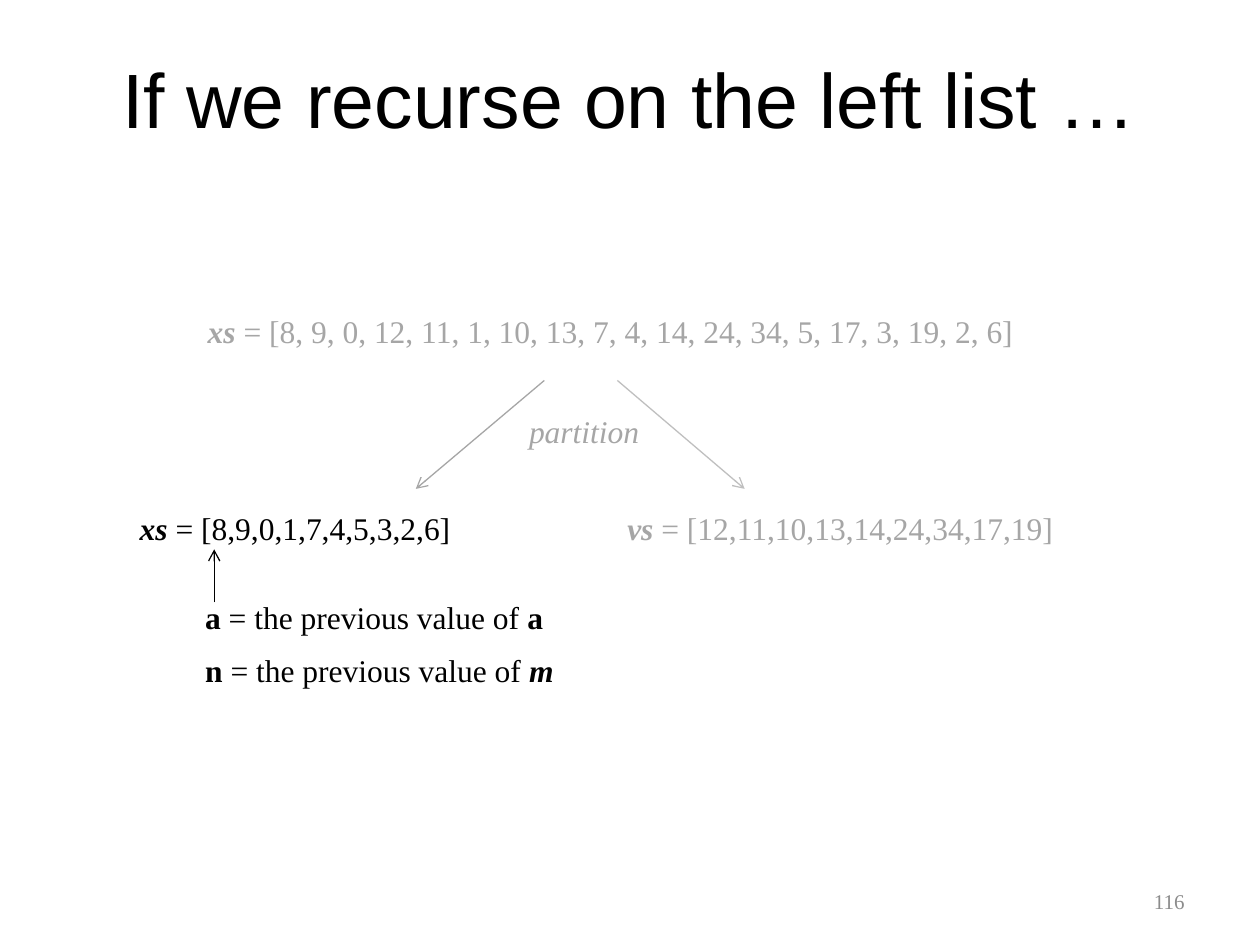
import dataclasses

import pptx
import pptx.dml.color
import pptx.enum.shapes
import pptx.enum.text
import pptx.oxml
import pptx.oxml.ns
import pptx.util

Inches = pptx.util.Inches
Pt = pptx.util.Pt
RGB = pptx.dml.color.RGBColor
Align = pptx.enum.text.PP_ALIGN
Anchor = pptx.enum.text.MSO_ANCHOR


@dataclasses.dataclass(frozen=True)
class Theme:
    ink: RGB = RGB(0x00, 0x00, 0x00)
    faded: RGB = RGB(0xA6, 0xA6, 0xA6)
    faint: RGB = RGB(0xBF, 0xBF, 0xBF)
    number: RGB = RGB(0x8C, 0x8C, 0x8C)
    title_font: str = "Arial"
    body_font: str = "Times New Roman"
    title_size: Pt = Pt(44)
    body_size: Pt = Pt(18)
    number_size: Pt = Pt(12)
    line_width: Pt = Pt(0.75)


THEME = Theme()
ROW_HEIGHT = 0.4


def style(paragraph, font, size, color, align):
    paragraph.font.name = font
    paragraph.font.size = size
    paragraph.font.color.rgb = color
    paragraph.alignment = align


def add_expression(slide, left, top, width, color, *parts):
    box = slide.shapes.add_textbox(
        Inches(left), Inches(top), Inches(width), Inches(ROW_HEIGHT))
    frame = box.text_frame
    frame.word_wrap = False
    frame.auto_size = pptx.enum.text.MSO_AUTO_SIZE.SHAPE_TO_FIT_TEXT
    paragraph = frame.paragraphs[0]
    style(paragraph, THEME.body_font, THEME.body_size, color, Align.LEFT)
    for text, emphasis in parts:
        run = paragraph.add_run()
        run.text = text
        if "b" in emphasis:
            run.font.bold = True
        if "i" in emphasis:
            run.font.italic = True


def add_arrow(slide, start, end, color):
    arrow = slide.shapes.add_connector(
        pptx.enum.shapes.MSO_CONNECTOR.STRAIGHT,
        *(Inches(value) for value in (*start, *end)))
    arrow.line.color.rgb = color
    arrow.line.width = THEME.line_width
    head = pptx.oxml.parse_xml(
        f'<a:tailEnd {pptx.oxml.ns.nsdecls("a")} type="arrow"/>')
    arrow.line._get_or_add_ln().append(head)
    arrow._element.spPr.append(pptx.oxml.parse_xml(
        f'<a:effectLst {pptx.oxml.ns.nsdecls("a")}/>'))


def place_title(slide, left, top, width, height):
    title = slide.shapes.title
    title.left, title.top = Inches(left), Inches(top)
    title.width, title.height = Inches(width), Inches(height)
    frame = title.text_frame
    frame.text = "If we recurse on the left list …"
    frame.vertical_anchor = Anchor.TOP
    frame.margin_top = Inches(0.11)
    style(frame.paragraphs[0], THEME.title_font, THEME.title_size,
          THEME.ink, Align.CENTER)


def place_partition(slide, left, top):
    add_expression(
        slide, left + 0.54, top, 6.66, THEME.faded, ("xs", "bi"),
        (" = [8, 9, 0, 12, 11, 1, 10, 13, 7, 4, 14, 24, 34, 5, 17, 3, 19, 2, 6]", ""))
    arrow_top, arrow_bottom = top + 0.59, top + 1.45
    add_arrow(slide, (left + 3.31, arrow_top), (left + 2.29, arrow_bottom), THEME.faded)
    add_arrow(slide, (left + 3.89, arrow_top), (left + 4.9, arrow_bottom), THEME.faint)
    add_expression(slide, left + 3.09, top + 0.79, 1.09, THEME.faded, ("partition", "i"))
    lists_top = top + 1.56
    add_expression(slide, left, lists_top, 2.69, THEME.ink,
                   ("xs", "bi"), (" = [8,9,0,1,7,4,5,3,2,6]", ""))
    add_expression(slide, left + 3.87, lists_top, 3.69, THEME.faded,
                   ("vs", "bi"), (" = [12,11,10,13,14,24,34,17,19]", ""))


def place_bounds(slide, left, top):
    add_arrow(slide, (left + 0.17, top + 0.08), (left + 0.17, top - 0.34), THEME.ink)
    bounds = (("a", "a", "b", 2.9), ("n", "m", "bi", 2.99))
    for row, (name, previous, emphasis, width) in enumerate(bounds):
        add_expression(slide, left, top + 0.42 * row, width, THEME.ink, (name, "b"),
                       (" = the previous value of ", ""), (previous, emphasis))


def place_slide_number(slide, left, top, width, height):
    box = slide.shapes.add_textbox(
        Inches(left), Inches(top), Inches(width), Inches(height))
    frame = box.text_frame
    frame.word_wrap = True
    frame.vertical_anchor = Anchor.MIDDLE
    frame.text = "116"
    style(frame.paragraphs[0], THEME.body_font, THEME.number_size,
          THEME.number, Align.RIGHT)


def main():
    deck = pptx.Presentation()
    deck.slide_width, deck.slide_height = Inches(10), Inches(7.5)
    slide = deck.slides.add_slide(deck.slide_layouts.get_by_name("Title Only"))
    place_slide_number(slide, 7.17, 6.95, 2.33, 0.4)
    place_title(slide, 0.5, 0.3, 9, 1.25)
    place_partition(slide, 1.01, 2.43)
    place_bounds(slide, 1.53, 4.7)
    deck.save("out.pptx")


if __name__ == "__main__":
    main()
